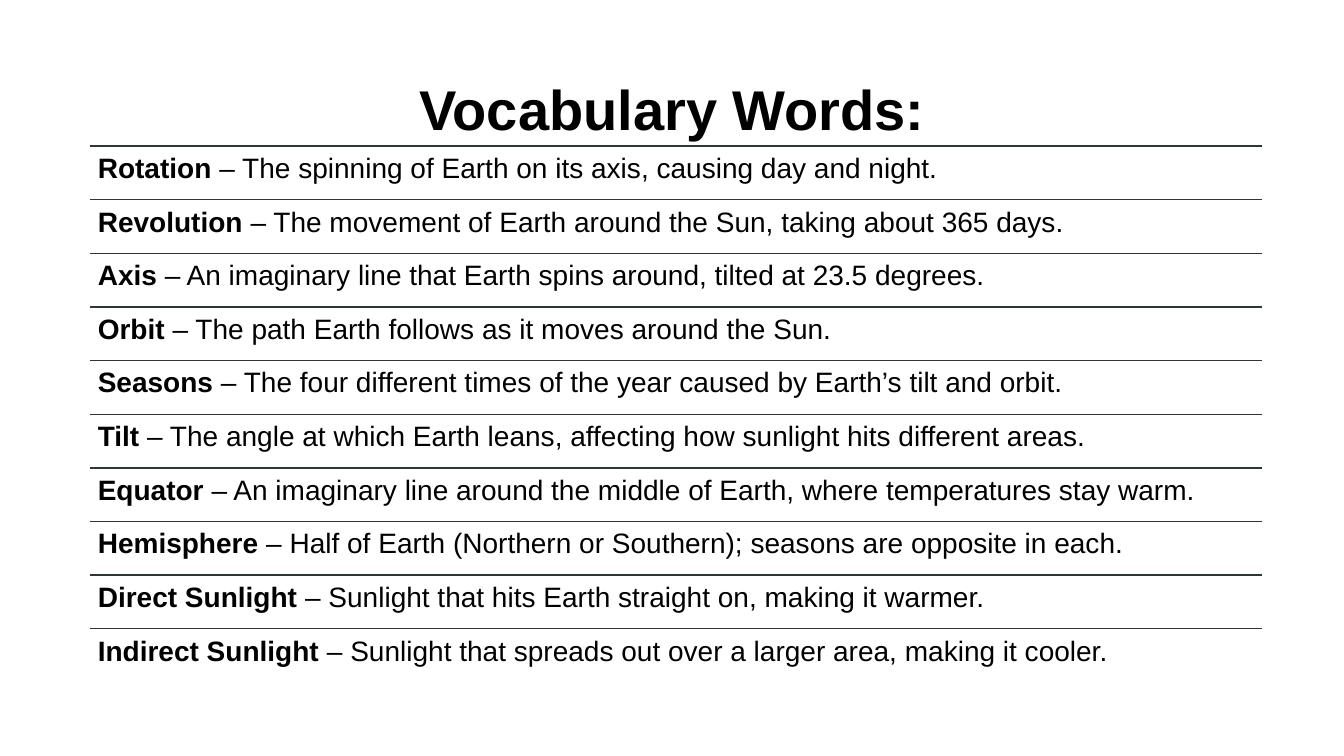
from dataclasses import dataclass

from lxml import etree
from pptx import Presentation
from pptx.dml.color import RGBColor
from pptx.enum.shapes import MSO_CONNECTOR
from pptx.enum.text import MSO_ANCHOR, PP_ALIGN
from pptx.oxml.ns import qn
from pptx.util import Inches, Pt

STRAIGHT = MSO_CONNECTOR.STRAIGHT
TOP, BOTTOM = MSO_ANCHOR.TOP, MSO_ANCHOR.BOTTOM
LEFT, CENTER = PP_ALIGN.LEFT, PP_ALIGN.CENTER

TITLE = "Vocabulary Words:"
VOCABULARY = [
    ("Rotation", "The spinning of Earth on its axis, causing day and night."),
    ("Revolution", "The movement of Earth around the Sun, taking about 365 days."),
    ("Axis", "An imaginary line that Earth spins around, tilted at 23.5 degrees."),
    ("Orbit", "The path Earth follows as it moves around the Sun."),
    ("Seasons", "The four different times of the year caused by Earth’s tilt and orbit."),
    ("Tilt", "The angle at which Earth leans, affecting how sunlight hits different areas."),
    ("Equator", "An imaginary line around the middle of Earth, where temperatures stay warm."),
    ("Hemisphere", "Half of Earth (Northern or Southern); seasons are opposite in each."),
    ("Direct Sunlight", "Sunlight that hits Earth straight on, making it warmer."),
    ("Indirect Sunlight", "Sunlight that spreads out over a larger area, making it cooler."),
]


@dataclass(frozen=True)
class Theme:
    font: str = "Arial"
    text: RGBColor = RGBColor(0x00, 0x00, 0x00)
    rule: RGBColor = RGBColor(0x2C, 0x39, 0x32)
    rule_width: Pt = Pt(1)
    title_size: Pt = Pt(40)
    entry_size: Pt = Pt(20)
    line_spacing: float = 0.9


THEME = Theme()
TITLE_BOX = (Inches(3.07), Inches(0.39), Inches(7.19), Inches(1.07))
TITLE_INSETS = (Inches(0.1), Inches(0.05))
ENTRY_INSETS = (Inches(0.08), Inches(0.08))
LIST_LEFT, LIST_TOP = Inches(0.89), Inches(1.45)
LIST_WIDTH, LIST_HEIGHT = Inches(11.63), Inches(5.32)


def add_text(page, bounds, spans, size, insets, anchor=TOP, align=LEFT):
    frame = page.shapes.add_textbox(*bounds).text_frame
    frame.word_wrap = True
    frame.vertical_anchor = anchor
    frame.margin_left = frame.margin_right = insets[0]
    frame.margin_top = frame.margin_bottom = insets[1]
    para = frame.paragraphs[0]
    para.alignment = align
    para.line_spacing = THEME.line_spacing
    para.font.name = THEME.font
    para.font.size = size
    para.font.color.rgb = THEME.text
    for text, bold in spans:
        span = para.add_run()
        span.text = text
        span.font.bold = bold


def add_rule(page, top):
    rule = page.shapes.add_connector(
        STRAIGHT, LIST_LEFT, top, LIST_LEFT + LIST_WIDTH, top
    )
    rule.line.color.rgb = THEME.rule
    rule.line.width = THEME.rule_width
    etree.SubElement(rule._element.spPr, qn("a:effectLst"))


def main():
    deck = Presentation()
    deck.slide_width, deck.slide_height = Inches(13.33), Inches(7.5)
    page = deck.slides.add_slide(deck.slide_layouts[6])
    add_text(page, TITLE_BOX, [(TITLE, True)], THEME.title_size, TITLE_INSETS, BOTTOM, CENTER)

    row_height = LIST_HEIGHT // len(VOCABULARY)
    for index, (term, meaning) in enumerate(VOCABULARY):
        top = LIST_TOP + index * row_height
        add_rule(page, top)
        add_text(
            page,
            (LIST_LEFT, top, LIST_WIDTH, row_height),
            [(term, True), (f" – {meaning}", False)],
            THEME.entry_size,
            ENTRY_INSETS,
        )
    deck.save("out.pptx")


if __name__ == "__main__":
    main()
